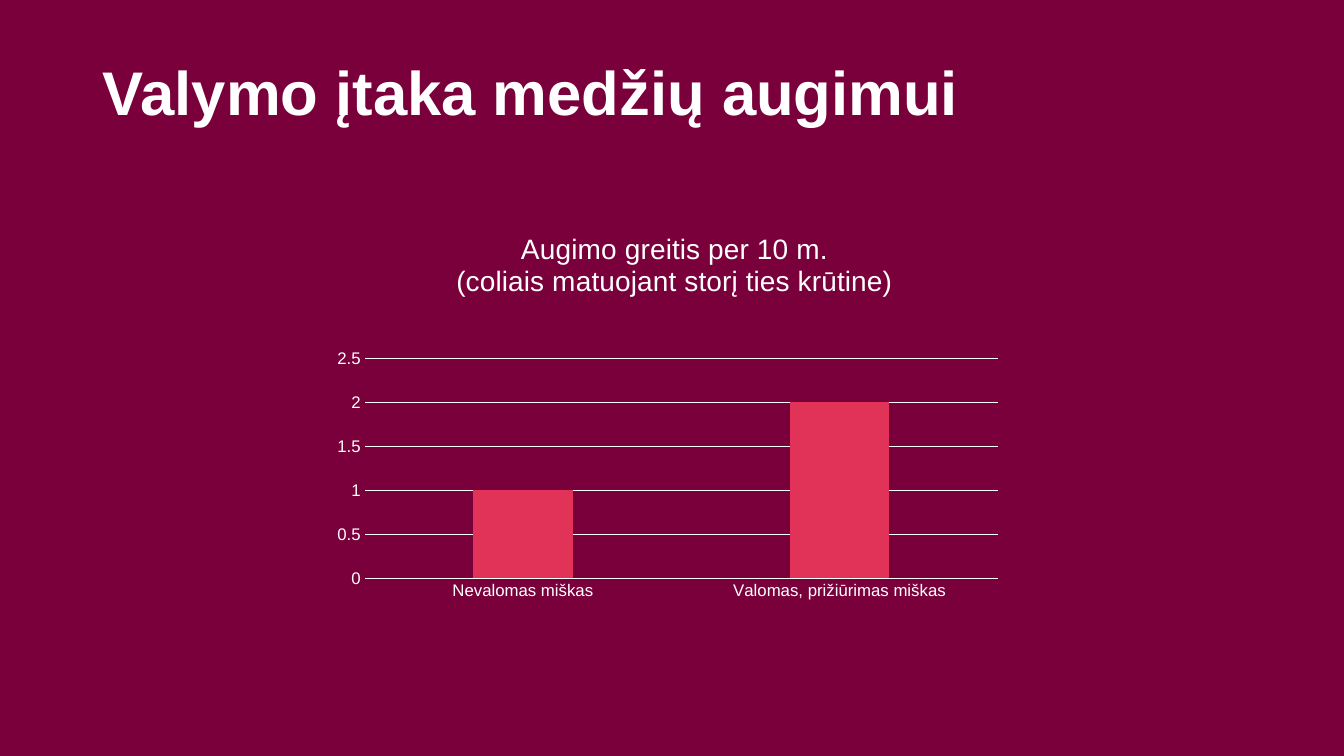
from dataclasses import dataclass

from lxml import etree
from pptx import Presentation
from pptx import util as u
from pptx.chart import data as chart_data
from pptx.dml import color
from pptx.enum import chart as chart_enum
from pptx.enum import text
from pptx.oxml import ns


@dataclass(frozen=True)
class Theme:
    font: str = "Arial"
    background: str = "7A003B"
    ink: str = "FFFFFF"
    bar: str = "E03357"
    title_size: int = 44
    chart_title_size: int = 20
    label_size: int = 12
    line_width: float = 0.75


@dataclass(frozen=True)
class Box:
    left: float
    top: float
    width: float
    height: float

    def inches(self) -> tuple:
        return tuple(u.Inches(n) for n in (self.left, self.top, self.width, self.height))


THEME = Theme()
TITLE_BOX = Box(0.92, 0.57, 9.9, 1.23)
CHART_BOX = Box(3.17, 2.07, 6.98, 4.15)
GROWTH = {"Nevalomas miškas": 1, "Valomas, prižiūrimas miškas": 2}
CHART_TITLE = "Augimo greitis per 10 m.\n(coliais matuojant storį ties krūtine)"


def rgb(value: str) -> color.RGBColor:
    return color.RGBColor.from_string(value)


def style_font(font, size: int, bold: bool = False) -> None:
    font.name = THEME.font
    font.size = u.Pt(size)
    font.bold = bold
    font.color.rgb = rgb(THEME.ink)


def style_line(line) -> None:
    line.color.rgb = rgb(THEME.ink)
    line.width = u.Pt(THEME.line_width)


def place(element, index: int, settings: dict) -> None:
    for old_layout in element.findall(ns.qn("c:layout")):
        element.remove(old_layout)
    layout = etree.Element(ns.qn("c:layout"))
    manual = etree.SubElement(layout, ns.qn("c:manualLayout"))
    for name, value in settings.items():
        etree.SubElement(manual, ns.qn(f"c:{name}")).set("val", str(value))
    element.insert(index, layout)


def add_title(slide) -> None:
    title = slide.shapes.title
    title.left, title.top, title.width, title.height = TITLE_BOX.inches()
    frame = title.text_frame
    frame.text = "Valymo įtaka medžių augimui"
    frame.word_wrap = True
    frame.auto_size = text.MSO_AUTO_SIZE.NONE
    frame.vertical_anchor = text.MSO_ANCHOR.TOP
    paragraph = frame.paragraphs[0]
    paragraph.alignment = text.PP_ALIGN.LEFT
    paragraph.line_spacing = 0.9
    style_font(paragraph.font, THEME.title_size, bold=True)


def add_growth_chart(slide) -> None:
    data = chart_data.CategoryChartData()
    data.categories = list(GROWTH)
    data.add_series("Series 1", list(GROWTH.values()))
    chart = slide.shapes.add_chart(
        chart_enum.XL_CHART_TYPE.COLUMN_CLUSTERED, *CHART_BOX.inches(), data
    ).chart
    chart.has_legend = False
    style_font(chart.font, THEME.label_size)

    title_frame = chart.chart_title.text_frame
    title_frame.text = CHART_TITLE
    for paragraph in title_frame.paragraphs:
        paragraph.alignment = text.PP_ALIGN.CENTER
        style_font(paragraph.font, THEME.chart_title_size)
    place(chart.chart_title._element, 1,
          {"xMode": "edge", "yMode": "edge", "x": 0.19, "y": 0.05})

    plot = chart.plots[0]
    plot.vary_by_categories = False
    plot.gap_width = 219
    plot.overlap = -27
    fill = plot.series[0].format.fill
    fill.solid()
    fill.fore_color.rgb = rgb(THEME.bar)
    place(chart._chartSpace.chart.plotArea, 0,
          {"layoutTarget": "inner", "xMode": "edge", "yMode": "edge",
           "x": 0.064, "y": 0.358, "w": 0.9, "h": 0.526})

    for axis in (chart.category_axis, chart.value_axis):
        axis.major_tick_mark = chart_enum.XL_TICK_MARK.NONE
        axis.minor_tick_mark = chart_enum.XL_TICK_MARK.NONE
        style_font(axis.tick_labels.font, THEME.label_size)
    style_line(chart.category_axis.format.line)
    value_axis = chart.value_axis
    value_axis.minimum_scale = 0
    value_axis.maximum_scale = 2.5
    value_axis.major_unit = 0.5
    value_axis.format.line.fill.background()
    style_line(value_axis.major_gridlines.format.line)


def main() -> None:
    presentation = Presentation()
    presentation.slide_width = u.Inches(13.33)
    presentation.slide_height = u.Inches(7.5)
    slide = presentation.slides.add_slide(presentation.slide_layouts.get_by_name("Title Only"))
    slide.background.fill.solid()
    slide.background.fill.fore_color.rgb = rgb(THEME.background)
    add_title(slide)
    add_growth_chart(slide)
    presentation.save("out.pptx")


if __name__ == "__main__":
    main()
